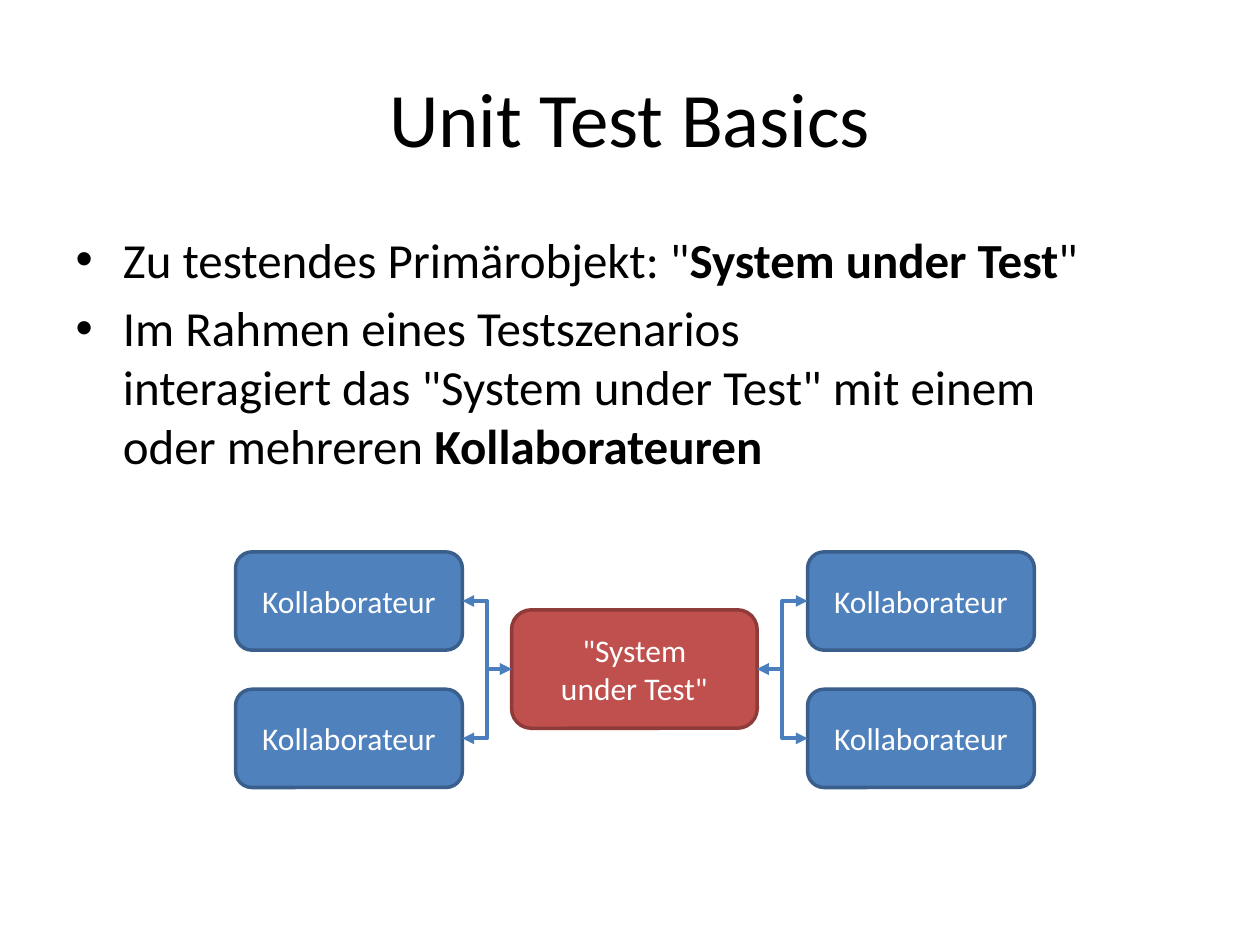
from lxml.etree import SubElement
from pptx import Presentation
from pptx.dml.color import RGBColor
from pptx.enum.shapes import MSO_CONNECTOR, MSO_SHAPE
from pptx.enum.text import MSO_ANCHOR, PP_ALIGN
from pptx.oxml.ns import qn
from pptx.util import Pt

PX = 9144  # 100 px to the inch
TOP, LEFT, BOTTOM, RIGHT = range(4)  # connection sites of a box


def color(code):
    return RGBColor.from_string(code)


def place(shape, box):
    shape.left, shape.top, shape.width, shape.height = [v * PX for v in box]


def style(par, size, code):
    par.font.name = "Calibri"
    par.font.size = Pt(size)
    par.font.color.rgb = color(code)


def add_title(slide, box, text):
    title = slide.shapes.title
    place(title, box)
    title.text_frame.text = text
    par = title.text_frame.paragraphs[0]
    par.alignment = PP_ALIGN.CENTER
    style(par, 44, "000000")


def add_list(slide, box, items):
    """Each item is a list of (text, bold) pairs; a newline breaks the line."""
    body = slide.placeholders[1]
    place(body, box)
    frame = body.text_frame
    for i, item in enumerate(items):
        par = frame.add_paragraph() if i else frame.paragraphs[0]
        style(par, 28, "000000")
        for text, bold in item:
            for j, line in enumerate(text.split("\n")):
                if j:
                    par.add_line_break()
                run = par.add_run()
                run.text = line
                run.font.bold = bold


def add_node(slide, box, text, fill, edge):
    node = slide.shapes.add_shape(
        MSO_SHAPE.ROUNDED_RECTANGLE, *[v * PX for v in box])
    node.shadow.inherit = False
    node.fill.solid()
    node.fill.fore_color.rgb = color(fill)
    node.line.color.rgb = color(edge)
    node.line.width = Pt(2)
    frame = node.text_frame
    frame.text = text
    frame.word_wrap = True
    frame.vertical_anchor = MSO_ANCHOR.MIDDLE
    par = frame.paragraphs[0]
    par.alignment = PP_ALIGN.CENTER
    style(par, 18, "FFFFFF")
    return node


def add_link(slide, start, exit_site, end, entry):
    link = slide.shapes.add_connector(MSO_CONNECTOR.ELBOW, 0, 0, 0, 0)
    link.begin_connect(start, exit_site)
    link.end_connect(end, entry)
    link.line.color.rgb = color("4B7EBC")
    link.line.width = Pt(2.25)
    # Arrowheads at both ends, no shadow
    line = link.line._get_or_add_ln()
    for tag in ("a:headEnd", "a:tailEnd"):
        SubElement(line, qn(tag)).set("type", "triangle")
    SubElement(link._element.spPr, qn("a:effectLst"))


def add_diagram(slide, box):
    """A centre node linked to two collaborators on each side."""
    x, y, w, h = box
    core_w, core_h, side_w, side_h = 195, 94, 180, 78
    core = add_node(
        slide,
        (x + (w - core_w) // 2, y + (h - core_h) // 2, core_w, core_h),
        "\"System\vunder Test\"", "C0504D", "8E3B39")
    sides = ((x, LEFT, RIGHT), (x + w - side_w, RIGHT, LEFT))
    for left, exit_site, entry in sides:
        for top in (y, y + h - side_h):
            node = add_node(slide, (left, top, side_w, side_h),
                            "Kollaborateur", "4F81BD", "3A5F8C")
            add_link(slide, core, exit_site, node, entry)


def main():
    deck = Presentation()
    deck.slide_width, deck.slide_height = 1000 * PX, 750 * PX
    slide = deck.slides.add_slide(deck.slide_layouts[1])
    add_title(slide, (50, 30, 900, 125), "Unit Test Basics")
    add_list(slide, (50, 177, 900, 495), [
        [("Zu testendes Primärobjekt: \"", False),
         ("System under Test", True), ("\"", False)],
        [("Im Rahmen eines Testszenarios\n"
          "interagiert das \"System under Test\" mit einem\n"
          "oder mehreren ", False), ("Kollaborateuren", True)],
    ])
    add_diagram(slide, (187, 438, 634, 187))
    deck.save("out.pptx")


if __name__ == "__main__":
    main()
